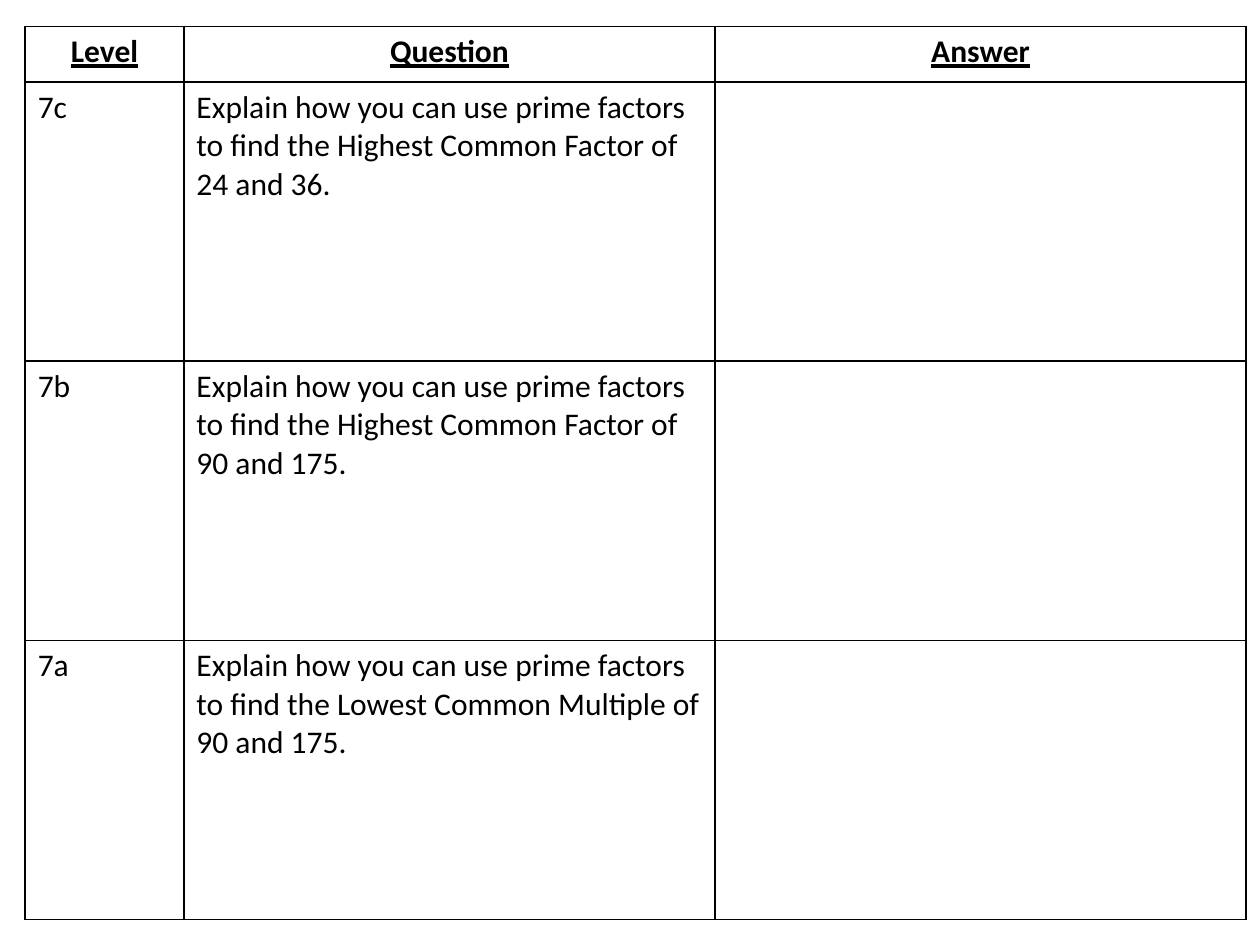
from lxml.etree import SubElement
from pptx import Presentation
from pptx.dml.color import RGBColor
from pptx.enum.text import PP_ALIGN
from pptx.oxml.ns import qn
from pptx.util import Inches, Pt

BLACK = RGBColor(0x00, 0x00, 0x00)
HEADINGS = ("Level", "Question", "Answer")
TASK = "Explain how you can use prime factors to find the {} of {}."
QUESTIONS = (
    ("7c", "Highest Common Factor", "24 and 36"),
    ("7b", "Highest Common Factor", "90 and 175"),
    ("7a", "Lowest Common Multiple", "90 and 175"),
)
COLUMN_SHARES = (0.13, 0.435, 0.435)
HEADER_HEIGHT = Inches(0.44)


def add_borders(cell):
    """Draw a one-point black line on every side of a cell."""
    properties = cell._tc.get_or_add_tcPr()
    for index, side in enumerate(("lnL", "lnR", "lnT", "lnB")):
        line = properties.makeelement(qn(f"a:{side}"), {"w": str(Pt(1))})
        fill = SubElement(line, qn("a:solidFill"))
        SubElement(fill, qn("a:srgbClr"), val=str(BLACK))
        properties.insert(index, line)


def format_cell(cell, text, is_heading):
    """Write one cell and give it its font, alignment and borders."""
    cell.text = text
    cell.fill.background()
    paragraph = cell.text_frame.paragraphs[0]
    paragraph.alignment = PP_ALIGN.CENTER if is_heading else PP_ALIGN.LEFT
    font = paragraph.font
    font.name = "Calibri"
    font.size = Pt(18)
    font.bold = font.underline = is_heading
    font.color.rgb = BLACK
    add_borders(cell)


def add_question_table(slide, left, top, width, height):
    """Fill a box with the heading row and equally tall question rows."""
    rows = [HEADINGS]
    rows += [(level, TASK.format(goal, numbers), "") for level, goal, numbers in QUESTIONS]
    table = slide.shapes.add_table(len(rows), len(HEADINGS), left, top, width, height).table
    for column, share in zip(table.columns, COLUMN_SHARES):
        column.width = int(width * share)
    question_height = (height - HEADER_HEIGHT) // len(QUESTIONS)
    for row_index, texts in enumerate(rows):
        is_heading = row_index == 0
        table.rows[row_index].height = HEADER_HEIGHT if is_heading else question_height
        for column_index, text in enumerate(texts):
            format_cell(table.cell(row_index, column_index), text, is_heading)


def main():
    """Build the worksheet slide and save it."""
    presentation = Presentation()
    presentation.slide_width = Inches(10)
    presentation.slide_height = Inches(7.5)
    slide = presentation.slides.add_slide(presentation.slide_layouts[6])
    add_question_table(slide, Inches(0.2), Inches(0.21), Inches(9.69), Inches(7.09))
    presentation.save("out.pptx")


if __name__ == "__main__":
    main()
